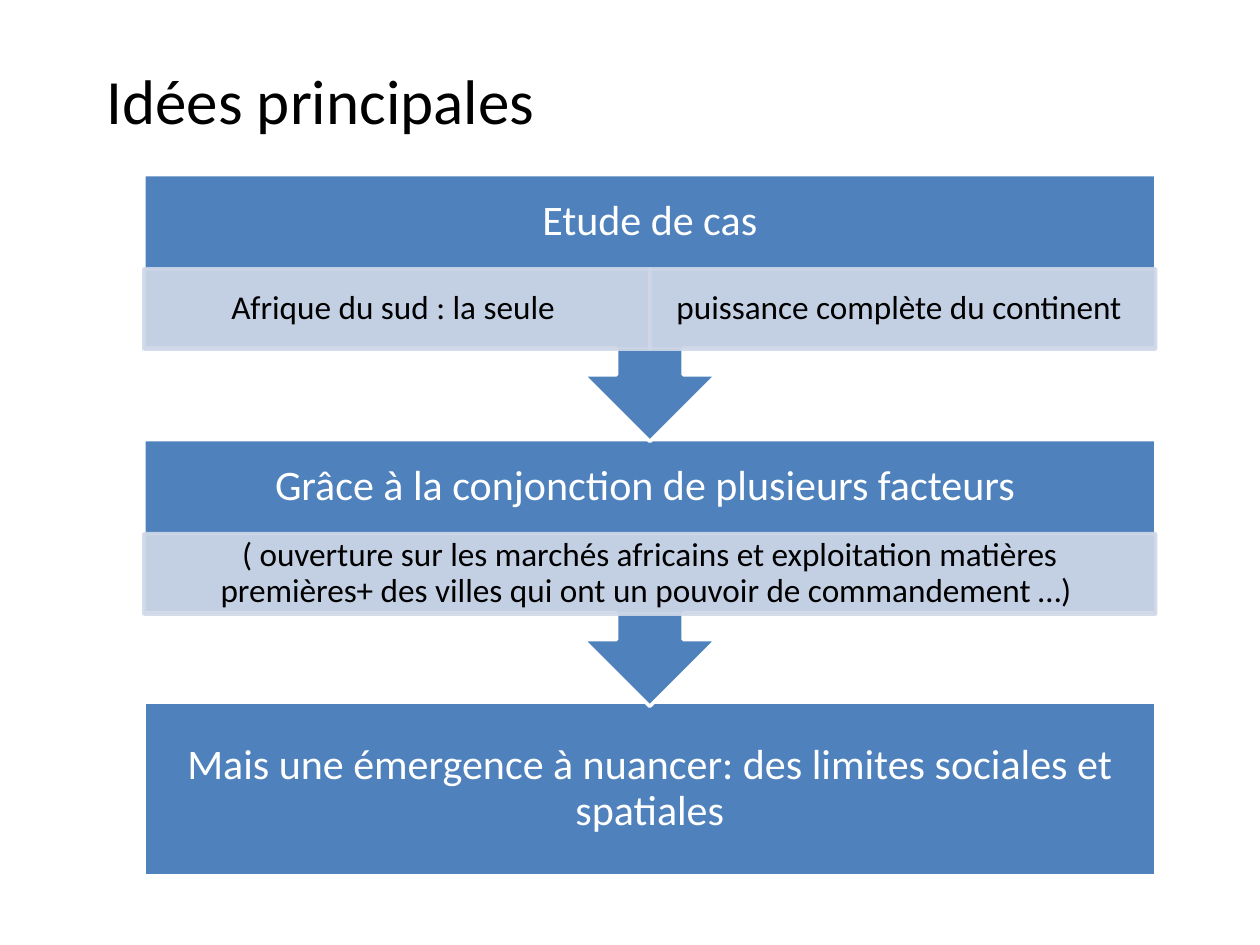
import dataclasses
import typing

import lxml.etree
import pptx
import pptx.dml.color
import pptx.enum.shapes
import pptx.enum.text
import pptx.oxml.ns
import pptx.util

Cm = pptx.util.Cm
Pt = pptx.util.Pt
SHAPE = pptx.enum.shapes.MSO_SHAPE
ALIGN = pptx.enum.text.PP_ALIGN
ANCHOR = pptx.enum.text.MSO_ANCHOR


@dataclasses.dataclass(frozen=True)
class Theme:
    font: str = "Calibri"
    title_size: int = 36
    header_size: int = 24
    detail_size: int = 19
    dark: str = "000000"
    light: str = "FFFFFF"
    block: str = "4F81BD"
    detail: str = "D0D8E8"
    detail_alpha: int = 90
    line: int = 2


@dataclasses.dataclass(frozen=True)
class Step:
    header: str
    details: tuple[str, ...]


THEME = Theme()
LEFT, TOP, WIDTH = 2.9, 3.52, 20.4
PITCH, CALLOUT_H = 5.34, 5.38
HEADER_H, DETAIL_H = 1.9, 1.62
LAST_TOP, LAST_H = 14.15, 3.51

STEPS = (
    Step("Etude de cas", ("Afrique du sud : la seule ", "puissance complète du continent ")),
    Step(
        "Grâce à la conjonction de plusieurs facteurs ",
        ("( ouverture sur les marchés africains et exploitation matières premières+ "
         "des villes qui ont un pouvoir de commandement …) ",),
    ),
)
CONCLUSION = "Mais une émergence à nuancer: des limites sociales et spatiales"


def rgb(value: str) -> pptx.dml.color.RGBColor:
    return pptx.dml.color.RGBColor.from_string(value)


def put_text(sp: typing.Any, text: str, *, size: int, color: str,
             align: ALIGN = ALIGN.CENTER, anchor: ANCHOR = ANCHOR.MIDDLE,
             inset: tuple[float, float] = (0.48, 0.48), spacing: float = 0.9) -> None:
    tf = sp.text_frame
    tf.word_wrap = True
    tf.vertical_anchor = anchor
    tf.margin_left = tf.margin_right = Cm(inset[0])
    tf.margin_top = tf.margin_bottom = Cm(inset[1])
    p = tf.paragraphs[0]
    p.alignment = align
    p.line_spacing = spacing
    r = p.add_run()
    r.text = text
    r.font.name = THEME.font
    r.font.size = Pt(size)
    r.font.color.rgb = rgb(color)


def add_box(slide: typing.Any, kind: SHAPE, x: float, y: float, w: float, h: float,
            *, fill: str, line: str, alpha: int = 100) -> typing.Any:
    sp = slide.shapes.add_shape(kind, Cm(x), Cm(y), Cm(w), Cm(h))
    sp.shadow.inherit = False
    sp.fill.solid()
    sp.fill.fore_color.rgb = rgb(fill)
    sp.line.color.rgb = rgb(line)
    sp.line.width = Pt(THEME.line)
    if alpha < 100:
        for clr in sp.element.spPr.iter(pptx.oxml.ns.qn("a:srgbClr")):
            lxml.etree.SubElement(clr, pptx.oxml.ns.qn("a:alpha"), val=str(alpha * 1000))
    return sp


def add_text_box(slide: typing.Any, x: float, y: float, w: float, h: float) -> typing.Any:
    return slide.shapes.add_textbox(Cm(x), Cm(y), Cm(w), Cm(h))


def add_step(slide: typing.Any, step: Step, y: float) -> None:
    callout = add_box(slide, SHAPE.UP_ARROW_CALLOUT, LEFT, y, WIDTH, CALLOUT_H,
                      fill=THEME.block, line=THEME.light)
    callout.rotation = 180
    put_text(add_text_box(slide, LEFT, y, WIDTH, HEADER_H), step.header,
             size=THEME.header_size, color=THEME.light)
    w = WIDTH / len(step.details)
    for i, detail in enumerate(step.details):
        sp = add_box(slide, SHAPE.RECTANGLE, LEFT + i * w, y + HEADER_H, w, DETAIL_H,
                     fill=THEME.detail, line=THEME.detail, alpha=THEME.detail_alpha)
        put_text(sp, detail, size=THEME.detail_size, color=THEME.dark, inset=(0.38, 0.07))


def main() -> None:
    prs = pptx.Presentation()
    prs.slide_width, prs.slide_height = Cm(25.4), Cm(19.05)
    slide = prs.slides.add_slide(prs.slide_layouts[6])
    put_text(add_text_box(slide, 1.9, 1.12, 20.8, 1.8), "Idées principales",
             size=THEME.title_size, color=THEME.dark, align=ALIGN.LEFT,
             anchor=ANCHOR.TOP, inset=(0.25, 0.13), spacing=1.0)
    conclusion = add_box(slide, SHAPE.RECTANGLE, LEFT, LAST_TOP, WIDTH, LAST_H,
                         fill=THEME.block, line=THEME.light)
    put_text(conclusion, CONCLUSION, size=THEME.header_size, color=THEME.light)
    for i, step in reversed(list(enumerate(STEPS))):
        add_step(slide, step, TOP + i * PITCH)
    prs.save("out.pptx")


if __name__ == "__main__":
    main()
